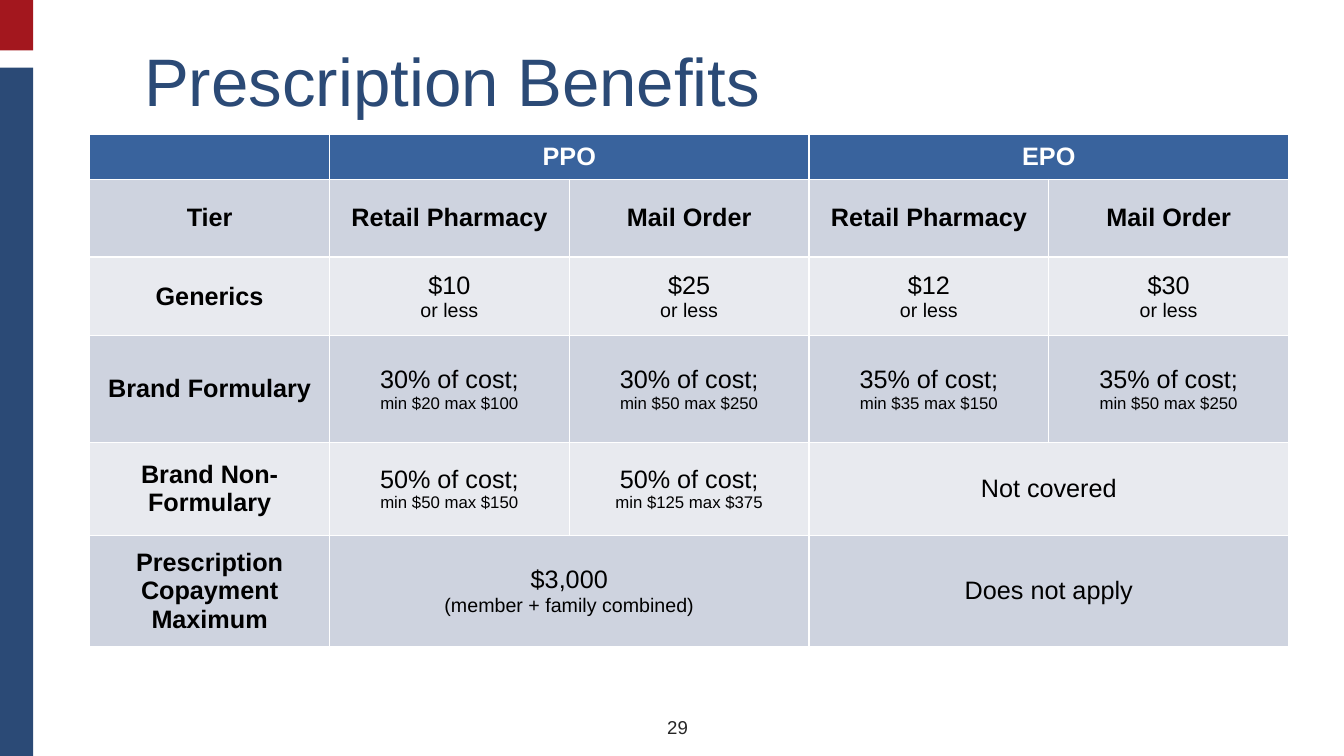
import pptx
import pptx.util
import pptx.dml.color
import pptx.enum.shapes
import pptx.enum.text

Inches, Pt = pptx.util.Inches, pptx.util.Pt
PP_ALIGN, ANCHOR = pptx.enum.text.PP_ALIGN, pptx.enum.text.MSO_ANCHOR
NAVY, RED, BLUE, BANDS = "2B4A76", "A3171E", "39639D", ("CED3DF", "E8EAEF")


def rgb(value):
    return pptx.dml.color.RGBColor.from_string(value)


def style(p, size, color, bold=False, align=PP_ALIGN.CENTER):
    p.alignment = align
    p.font.name, p.font.size, p.font.bold = "Arial", Pt(size), bold
    p.font.color.rgb = rgb(color)


prs = pptx.Presentation()
prs.slide_width, prs.slide_height = Inches(13.33), Inches(7.5)
s = prs.slides.add_slide(prs.slide_layouts[5])

# Side bars
for top, height, color in [(0, 0.5, RED), (0.67, 6.83, NAVY)]:
    sp = s.shapes.add_shape(pptx.enum.shapes.MSO_SHAPE.RECTANGLE,
                            0, Inches(top), Inches(0.33), Inches(height))
    sp.shadow.inherit = False
    sp.fill.solid()
    sp.fill.fore_color.rgb = rgb(color)
    sp.line.fill.background()

# Title
title = s.shapes.title
title.left, title.top = Inches(1.33), Inches(0.25)
title.width, title.height = Inches(11.45), Inches(1.08)
tf = title.text_frame
tf.text = "Prescription Benefits"
tf.vertical_anchor = ANCHOR.MIDDLE
style(tf.paragraphs[0], 48, NAVY, align=PP_ALIGN.LEFT)

# Benefits table: None marks a cell merged into the one on its left
rows = [
    ["", "PPO", None, "EPO", None],
    ["Tier"] + ["Retail Pharmacy", "Mail Order"] * 2,
    ["Generics"] + [f"{price}\nor less" for price in ("$10", "$25", "$12", "$30")],
    ["Brand Formulary", "30% of cost;\nmin $20 max $100", "30% of cost;\nmin $50 max $250",
     "35% of cost;\nmin $35 max $150", "35% of cost;\nmin $50 max $250"],
    ["Brand Non-Formulary", "50% of cost;\nmin $50 max $150",
     "50% of cost;\nmin $125 max $375", "Not covered", None],
    ["Prescription Copayment Maximum", "$3,000\n(member + family combined)", None,
     "Does not apply", None],
]
row_heights = [0.45, 0.77, 0.78, 1.06, 0.92, 1.11]
table = s.shapes.add_table(len(rows), 5, Inches(0.89), Inches(1.33),
                           Inches(11.89), Inches(sum(row_heights))).table

for i, (height, row) in enumerate(zip(row_heights, rows)):
    table.rows[i].height = Inches(height)
    for j, text in enumerate(row):
        cell = table.cell(i, j)
        cell.fill.solid()
        cell.fill.fore_color.rgb = rgb(BANDS[(i - 1) % 2] if i else BLUE)
        if text is None:
            table.cell(i, j - 1).merge(cell)
            continue
        cell.margin_left = cell.margin_right = Inches(0.13)
        cell.margin_top = cell.margin_bottom = Inches(0.05)
        cell.vertical_anchor = ANCHOR.MIDDLE
        cell.text = text
        for k, p in enumerate(cell.text_frame.paragraphs):
            detail_size = 12 if p.text.startswith("min") else 14
            style(p, detail_size if k else 18, "000000" if i else "FFFFFF",
                  bold=i < 2 or j == 0)

# Page number
tf = s.shapes.add_textbox(Inches(6.33), Inches(7), Inches(0.78), Inches(0.42)).text_frame
tf.word_wrap = True
tf.vertical_anchor = ANCHOR.MIDDLE
tf.text = "29"
style(tf.paragraphs[0], 13.3, "262626")

prs.save("out.pptx")
